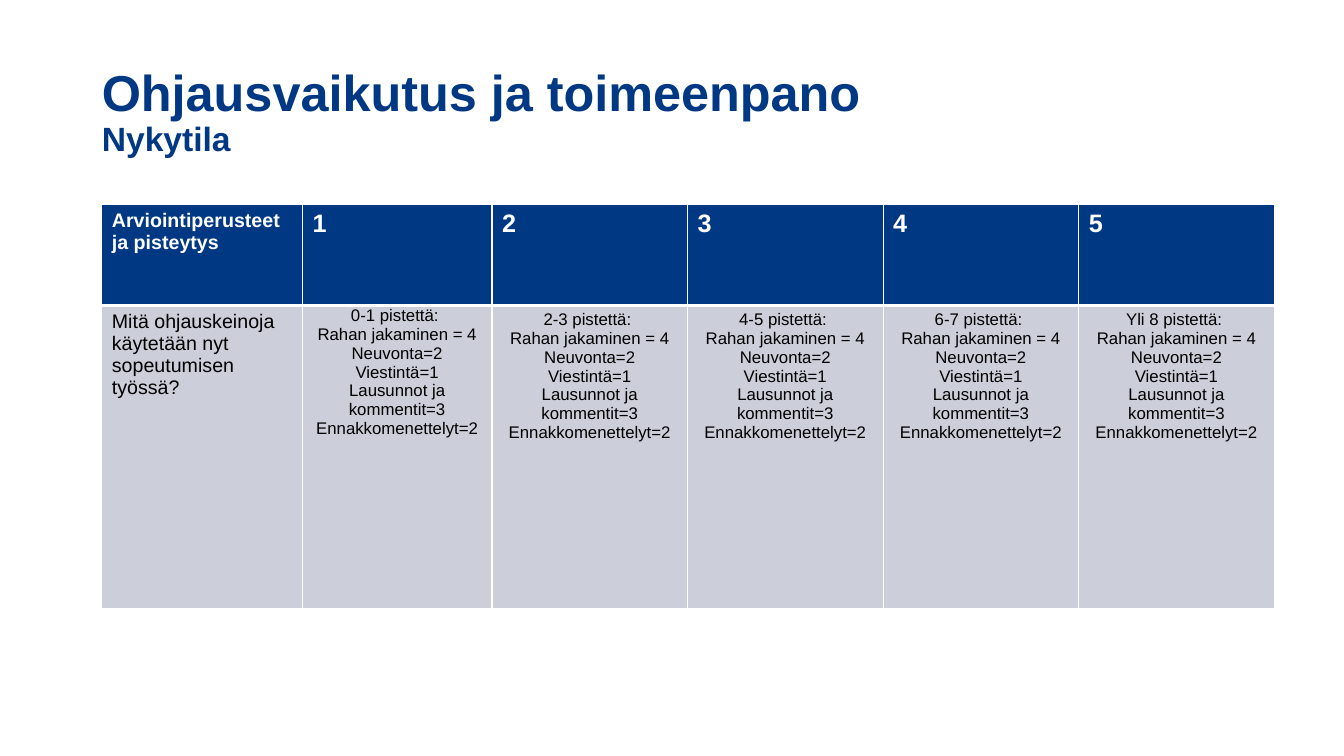
"""Build the slide on steering effect and implementation with its scoring table."""
import copy

import pptx
import pptx.util
import pptx.dml.color
import pptx.enum.text
import pptx.oxml
import pptx.oxml.ns
from dataclasses import dataclass

TITLE = "Ohjausvaikutus ja toimeenpano"
SUBTITLE = "Nykytila"
CRITERIA = "Arviointiperusteet ja pisteytys"
QUESTION = "Mitä ohjauskeinoja käytetään nyt sopeutumisen työssä?"
SCORES = ["0-1 pistettä: ", "2-3 pistettä: ", "4-5 pistettä: ", "6-7 pistettä: ", "Yli 8 pistettä: "]
MEANS = [
    "Rahan jakaminen = 4",
    "Neuvonta=2",
    "Viestintä=1",
    "Lausunnot ja kommentit=3",
    "Ennakkomenettelyt=2",
]

SLIDE_WIDTH, SLIDE_HEIGHT = 13.33, 7.5
LEFT, CONTENT_WIDTH = 1.01, 11.63
TITLE_TOP, TITLE_HEIGHT = 0.51, 1.22
TABLE_TOP = 2.03
COLUMNS = [1.99, 1.88] + [1.94] * 4
ROWS = [1, 3.01]


@dataclass(frozen=True)
class Theme:
    font: str = "Arial"
    blue: str = "003883"
    grey: str = "CCCED9"
    white: str = "FFFFFF"
    black: str = "000000"
    title: int = 36
    subtitle: int = 24
    score: int = 18
    label: int = 14
    detail: int = 12
    thin: int = 1
    thick: int = 3


THEME = Theme()
ALIGN = pptx.enum.text.PP_ALIGN


def apply(target, values):
    for name, value in values.items():
        setattr(target, name, value)


def style_font(font, size, color, bold):
    apply(font, {"name": THEME.font, "size": pptx.util.Pt(size), "bold": bold})
    font.color.rgb = pptx.dml.color.RGBColor.from_string(color)


def add_title(slide):
    title = slide.shapes.title
    bounds = {"left": LEFT, "top": TITLE_TOP, "width": CONTENT_WIDTH, "height": TITLE_HEIGHT}
    apply(title, {name: pptx.util.Inches(value) for name, value in bounds.items()})
    frame = title.text_frame
    apply(frame, {
        "margin_left": 0, "margin_top": 0, "margin_right": 0, "margin_bottom": 0,
        "word_wrap": True, "vertical_anchor": pptx.enum.text.MSO_ANCHOR.MIDDLE,
    })
    paragraph = frame.paragraphs[0]
    apply(paragraph, {"alignment": ALIGN.LEFT, "line_spacing": 0.9})
    heading = paragraph.add_run()
    heading.text = TITLE
    style_font(heading.font, THEME.title, THEME.blue, True)
    paragraph.add_line_break()
    line_break = paragraph._p.find(pptx.oxml.ns.qn("a:br"))
    line_break.append(copy.deepcopy(heading._r.rPr))
    subheading = paragraph.add_run()
    subheading.text = SUBTITLE
    style_font(subheading.font, THEME.subtitle, THEME.blue, True)


def add_borders(cell, widths):
    properties = cell._tc.get_or_add_tcPr()
    for index, (side, width) in enumerate(widths.items()):
        border = pptx.oxml.parse_xml(
            f'<a:ln{side} {pptx.oxml.ns.nsdecls("a")} w="{pptx.util.Pt(width)}">'
            f'<a:solidFill><a:srgbClr val="{THEME.white}"/></a:solidFill></a:ln{side}>'
        )
        properties.insert(index, border)


def fill_cell(cell, lines, size, header, alignment):
    cell.text = "\n".join(lines)
    for paragraph in cell.text_frame.paragraphs:
        paragraph.alignment = alignment
        style_font(paragraph.runs[0].font, size, THEME.white if header else THEME.black, header)
    cell.fill.solid()
    fill = THEME.blue if header else THEME.grey
    cell.fill.fore_color.rgb = pptx.dml.color.RGBColor.from_string(fill)
    add_borders(cell, {
        "L": THEME.thin,
        "R": THEME.thin,
        "T": THEME.thin if header else THEME.thick,
        "B": THEME.thick if header else THEME.thin,
    })


def add_scoring_table(slide):
    bounds = [pptx.util.Inches(value) for value in (LEFT, TABLE_TOP, CONTENT_WIDTH, sum(ROWS))]
    table = slide.shapes.add_table(len(ROWS), len(COLUMNS), *bounds).table
    for column, width in zip(table.columns, COLUMNS):
        column.width = pptx.util.Inches(width)
    for row, height in zip(table.rows, ROWS):
        row.height = pptx.util.Inches(height)
    fill_cell(table.cell(0, 0), [CRITERIA], THEME.label, True, ALIGN.LEFT)
    fill_cell(table.cell(1, 0), [QUESTION], THEME.label, False, ALIGN.LEFT)
    for number, score in enumerate(SCORES, start=1):
        fill_cell(table.cell(0, number), [str(number)], THEME.score, True, ALIGN.LEFT)
        fill_cell(table.cell(1, number), [score, *MEANS], THEME.detail, False, ALIGN.CENTER)
    tight = pptx.util.Inches(0.01)
    apply(table.cell(1, 1), {
        "margin_left": tight, "margin_top": tight, "margin_right": tight, "margin_bottom": 0,
    })


def main():
    presentation = pptx.Presentation()
    apply(presentation, {
        "slide_width": pptx.util.Inches(SLIDE_WIDTH),
        "slide_height": pptx.util.Inches(SLIDE_HEIGHT),
    })
    slide = presentation.slides.add_slide(presentation.slide_layouts.get_by_name("Title Only"))
    add_title(slide)
    add_scoring_table(slide)
    presentation.save("out.pptx")


if __name__ == "__main__":
    main()
